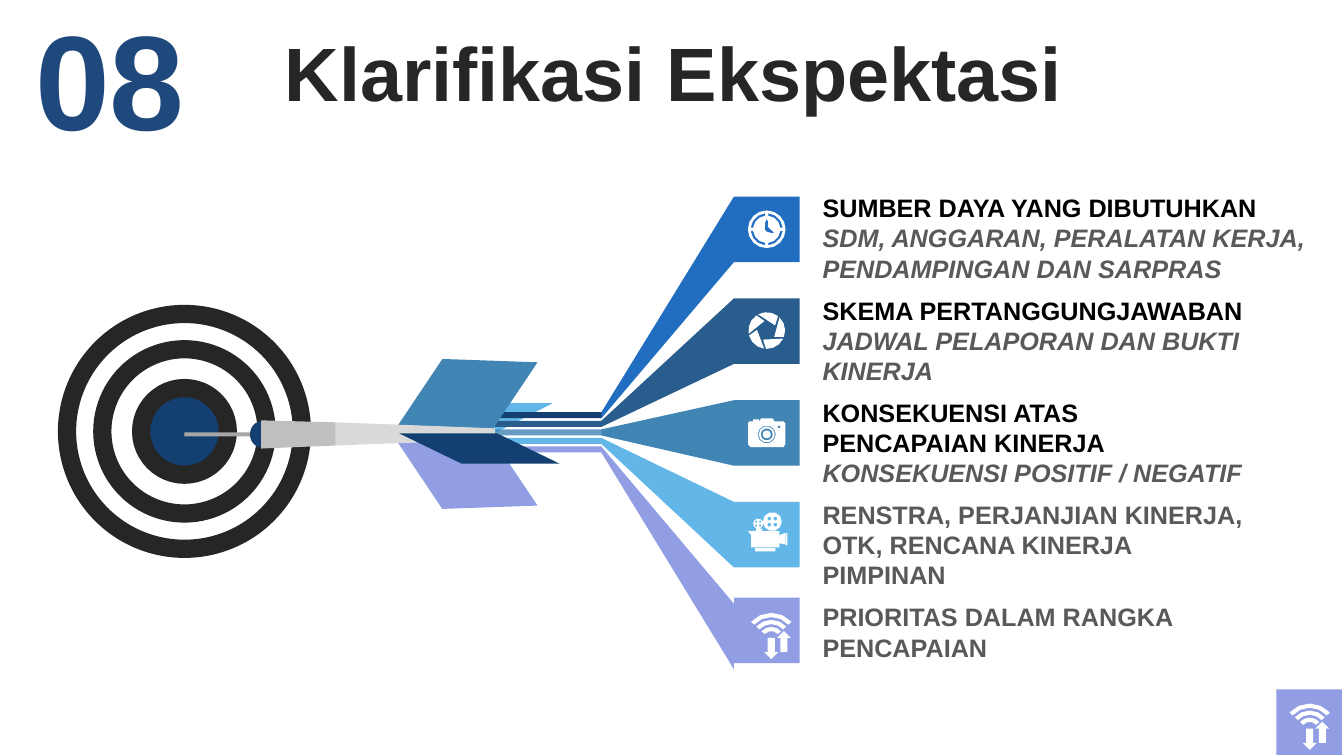
from math import cos, radians, sin

from lxml.etree import SubElement
from pptx import Presentation
from pptx.dml.color import RGBColor
from pptx.enum.shapes import MSO_SHAPE
from pptx.enum.text import MSO_ANCHOR, MSO_AUTO_SIZE, PP_ALIGN
from pptx.oxml.ns import qn
from pptx.util import Inches, Pt

NAVY, STEEL, SKY, LILAC = "134070", "4185B5", "62B7E8", "929EE3"
BRANCH_COLORS = ["216EC1", "285D8D", STEEL, SKY, LILAC]
WHITE, CHARCOAL, GRAY, BLACK = "FFFFFF", "262626", "595959", "000000"
TILE_LEFT, TILE_SIZE, STEM_HEIGHT = 72.8, 6.5, 0.6

TOPICS = [
    (18.6, 52.7, "SUMBER DAYA YANG DIBUTUHKAN",
     "SDM, ANGGARAN, PERALATAN KERJA, PENDAMPINGAN DAN SARPRAS"),
    (28.8, 44, "SKEMA PERTANGGUNGJAWABAN", "JADWAL PELAPORAN DAN BUKTI KINERJA"),
    (38.9, 44, "KONSEKUENSI ATAS PENCAPAIAN KINERJA", "KONSEKUENSI POSITIF / NEGATIF"),
    (49, 44, "RENSTRA, PERJANJIAN KINERJA, OTK, RENCANA KINERJA PIMPINAN", None),
    (59.2, 44, "PRIORITAS DALAM RANGKA PENCAPAIAN", None),
]


def grid(units):
    return Inches(units / 10)


def hex_color(value):
    return RGBColor.from_string(value)


def write(paragraph, text, size=18, color=BLACK, bold=True, italic=False, align=PP_ALIGN.LEFT):
    paragraph.alignment = align
    run = paragraph.add_run()
    run.text = text
    run.font.name = "Arial"
    run.font.size = Pt(size)
    run.font.bold = bold
    run.font.italic = italic
    run.font.color.rgb = hex_color(color)


def arc(x, y, radius, start=0, end=360):
    turn = 22.5 if radius > 1.2 else 36 if radius > 0.3 else 60
    steps = max(1, round(abs(end - start) / turn))
    points = steps if end - start == 360 else steps + 1
    angles = [radians(start + (end - start) * step / steps) for step in range(points)]
    return [(x + radius * cos(angle), y + radius * sin(angle)) for angle in angles]


def band(x, y, outer, inner, start, end):
    return arc(x, y, outer, start, end) + arc(x, y, inner, end, start)


def moved(x, y, offsets):
    return [(x + dx, y + dy) for dx, dy in offsets]


def box(x, y, width, height):
    return moved(x, y, [(0, 0), (width, 0), (width, height), (0, height)])


def clock(x, y):
    hands = [(0, -1.05), (0.15, -0.7), (0.1, -0.25), (0.75, 0.35), (0.6, 0.4),
             (0, 0.25), (-0.2, 0), (-0.15, -0.7)]
    gaps = [band(x, y, 1.6, 1.36, turn + 6, turn + 84) for turn in range(0, 360, 90)]
    return [arc(x, y, 1.87)] + gaps + [moved(x, y, hands)]


def aperture(x, y):
    return [arc(x, y, 1.82, turn, turn + 66) + arc(x, y, 0.97, turn + 86, turn + 87)[:1]
            for turn in range(26, 386, 72)]


def photo_camera(x, y):
    body = [(-1.85, -1.15), (-1.7, -1.3), (-1.35, -1.3), (-1.35, -1.5), (-0.8, -1.5),
            (-0.75, -1.3), (-0.55, -1.6), (0.6, -1.6), (0.75, -1.3), (1.65, -1.3),
            (1.85, -1.1), (1.85, 1), (1.65, 1.25), (-1.6, 1.25), (-1.85, 1)]
    lens = [arc(x, y, radius) for radius in (0.9, 0.8, 0.6, 0.4)]
    return [moved(x, y, body)] + lens + [arc(x + 1.22, y - 0.75, 0.15)]


def film_camera(x, y):
    body = [(-1.9, 0), (1.2, 0), (1.2, 0.4), (1.75, 0.2), (1.75, 1.3), (1.2, 1.2),
            (1.2, 1.6), (-1.6, 1.6), (-1.6, 0.4)]
    contours = [moved(x, y, body), box(x - 1.2, y + 1.7, 2, 0.3),
                box(x + 1.8, y + 0.2, 0.2, 1.2), box(x - 1.1, y - 0.25, 0.6, 0.25)]
    for reel_x, reel_y, radius, spread, hole in ((0.5, -0.95, 0.94, 0.3, 0.2),
                                                 (-0.9, -0.75, 0.5, 0.19, 0.12)):
        contours.append(arc(x + reel_x, y + reel_y, radius))
        contours += [arc(x + reel_x + dx * spread, y + reel_y + dy * spread, hole)
                     for dx in (-1, 1) for dy in (-1, 1)]
    return contours


def wireless(x, y):
    arrow = [(0, 1.9), (0.7, 1.2), (0.35, 1.2), (0.35, -0.2), (-0.35, -0.2), (-0.35, 1.2),
             (-0.7, 1.2)]
    waves = [band(x, y, radius, radius - 0.42, 222, 318) for radius in (2.7, 2, 1.3)]
    raised = [(-dx, -dy) for dx, dy in arrow]
    return waves + [moved(x, y, arrow), moved(x + 1.25, y + 1, raised)]


class TargetSlide:
    def __init__(self, presentation):
        layout = presentation.slide_layouts.get_by_name("Title Only")
        self.slide = presentation.slides.add_slide(layout)
        self.shapes = self.slide.shapes

    def title(self, text, left, top, width, height):
        shape = self.shapes.title
        shape.left, shape.top, shape.width, shape.height = map(grid, (left, top, width, height))
        frame = shape.text_frame
        frame.word_wrap = True
        frame.auto_size = MSO_AUTO_SIZE.NONE
        frame.vertical_anchor = MSO_ANCHOR.MIDDLE
        frame.paragraphs[0].line_spacing = 0.9
        write(frame.paragraphs[0], text, size=54, color=CHARCOAL, align=PP_ALIGN.CENTER)

    def text(self, lines, left, top, width, height, wrap=True):
        shape = self.shapes.add_textbox(*map(grid, (left, top, width, height)))
        frame = shape.text_frame
        frame.word_wrap = wrap
        frame.auto_size = MSO_AUTO_SIZE.SHAPE_TO_FIT_TEXT
        for index, (line, style) in enumerate(lines):
            paragraph = frame.add_paragraph() if index else frame.paragraphs[0]
            write(paragraph, line, **style)

    def paint(self, shape, color, line=None, opacity=None):
        shape.shadow.inherit = False
        shape.fill.solid()
        shape.fill.fore_color.rgb = hex_color(color)
        if opacity:
            solid_color = shape._element.spPr.find(qn("a:solidFill"))[0]
            SubElement(solid_color, qn("a:alpha")).set("val", str(opacity * 1000))
        if line:
            shape.line.color.rgb = hex_color(line)
            shape.line.width = Pt(13)
        else:
            shape.line.fill.background()

    def preset(self, kind, color, left, top, width, height, rotation=0, flip=False,
               adjustments=(), **paint):
        shape = self.shapes.add_shape(kind, *map(grid, (left, top, width, height)))
        for index, value in enumerate(adjustments):
            shape.adjustments[index] = value
        shape.rotation = rotation
        if flip:
            shape._element.spPr.find(qn("a:xfrm")).set("flipH", "1")
        self.paint(shape, color, **paint)

    def outline(self, color, contours):
        builder = self.shapes.build_freeform(*map(grid, contours[0][0]))
        for index, contour in enumerate(contours):
            points = [(grid(x), grid(y)) for x, y in contour]
            if index:
                builder.move_to(*points[0])
            builder.add_line_segments(points[1:], close=True)
        self.paint(builder.convert_to_shape(), color)

    def tile(self, color, left, top):
        self.preset(MSO_SHAPE.RECTANGLE, color, left, top, TILE_SIZE, TILE_SIZE)

    def feather(self, color, left, top, width, height, rotation, slant, flip=False):
        self.preset(MSO_SHAPE.PARALLELOGRAM, color, left, top, width, height,
                    rotation, flip, [slant])


def main():
    presentation = Presentation()
    presentation.slide_width, presentation.slide_height = Inches(13.33), Inches(7.5)
    target = TargetSlide(presentation)
    target.title("Klarifikasi Ekspektasi", 3.5, 3.7, 126.6, 7.9)

    for top, width, heading, detail in TOPICS:
        lines = [(heading, {"color": BLACK if detail else GRAY})]
        if detail:
            lines.append((detail, {"color": GRAY, "italic": True}))
        target.text(lines, 80.6, top, width, 10.1 if top < 59 else 7.1)

    for diameter, color in ((23.3, WHITE), (16.3, WHITE), (8.6, NAVY)):
        target.preset(MSO_SHAPE.OVAL, color, 18.3 - diameter / 2, 42.8 - diameter / 2,
                      diameter, diameter, line=CHARCOAL)

    target.feather(SKY, 39.5, 40, 15.3, 3, 180, 1.92)
    icons = [clock(76.05, 22.75), aperture(76.05, 32.8), photo_camera(76.05, 43.1),
             film_camera(76.1, 52.7), wireless(76.5, 63.5)]
    for index, (color, icon) in enumerate(zip(BRANCH_COLORS, icons)):
        branch_top = 19.5 + 10.1 * index
        stem_top = 40.9 + 0.85 * index
        target.tile(color, TILE_LEFT, 59.3 if color == LILAC else branch_top)
        target.outline(WHITE, icon)
        target.preset(MSO_SHAPE.RECTANGLE, color if index else NAVY, 49.1, stem_top, 10.6,
                      STEM_HEIGHT, opacity=80 if color == STEEL else None)
        target.outline(color, [[(59.65, stem_top), (TILE_LEFT, branch_top),
                                (TILE_LEFT, branch_top + TILE_SIZE),
                                (59.65, stem_top + STEM_HEIGHT)]])

    target.preset(MSO_SHAPE.RECTANGLE, "A6A6A6", 18.3, 42.9, 8, 0.4)
    target.feather(LILAC, 39.6, 43.7, 13.6, 6.7, 178, 0.62, flip=True)
    target.feather(STEEL, 39.6, 35.7, 13.6, 6.7, 182, 0.62)
    target.outline("D9D9D9", [[(33.3, 41.9), (49.1, 42.5), (49.1, 43.6), (33.3, 44.2)]])
    target.preset(MSO_SHAPE.CHORD, NAVY, 24.8, 41.8, 2.3, 2.6, adjustments=[53.91, 162])
    target.outline("BFBFBF", [[(25.9, 41.7), (33.3, 41.9), (33.3, 44.2), (25.9, 44.5)]])
    target.feather(NAVY, 39.6, 43, 15.9, 3, 180, 2.06, flip=True)

    target.tile(LILAC, 126.6, 68.4)
    target.outline(WHITE, wireless(129.9, 72.5))
    target.text([("08", {"size": 96, "color": "1F497D", "align": PP_ALIGN.CENTER})],
                2.4, -0.9, 17, 17.2, wrap=False)
    presentation.save("out.pptx")


if __name__ == "__main__":
    main()
